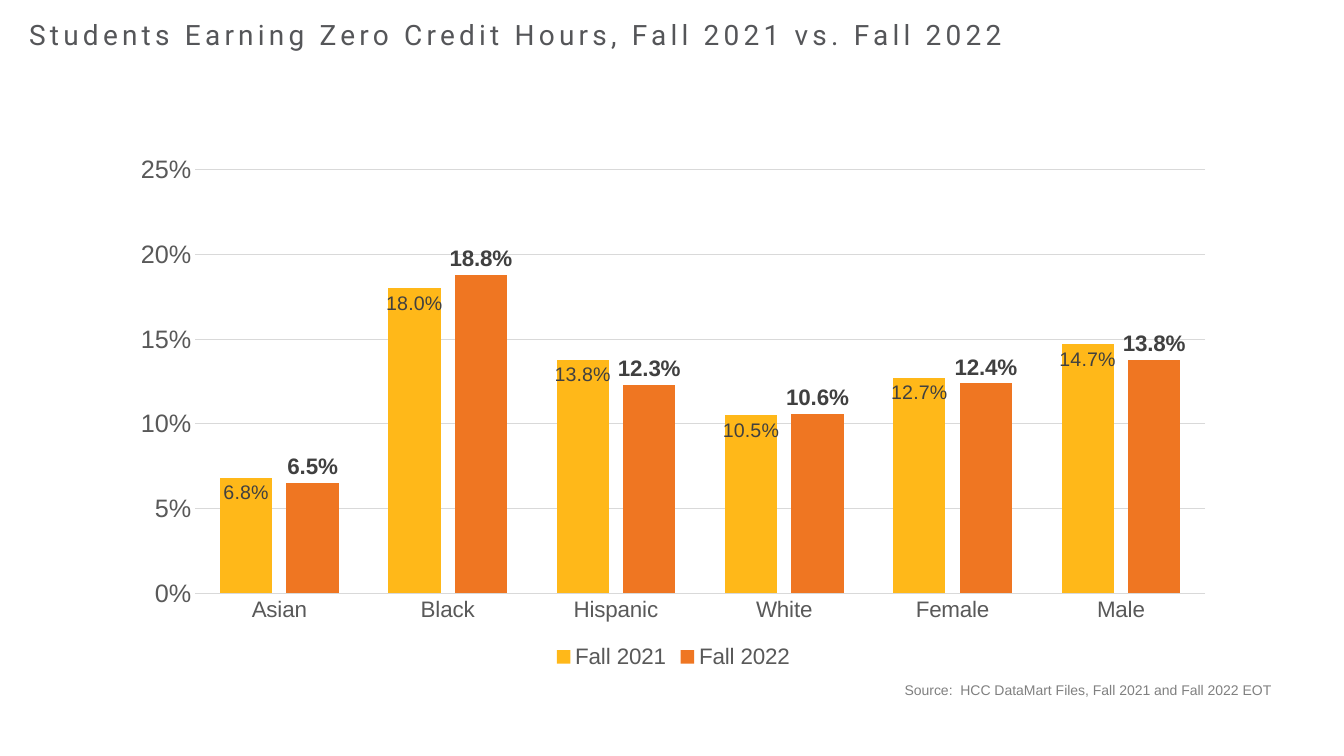
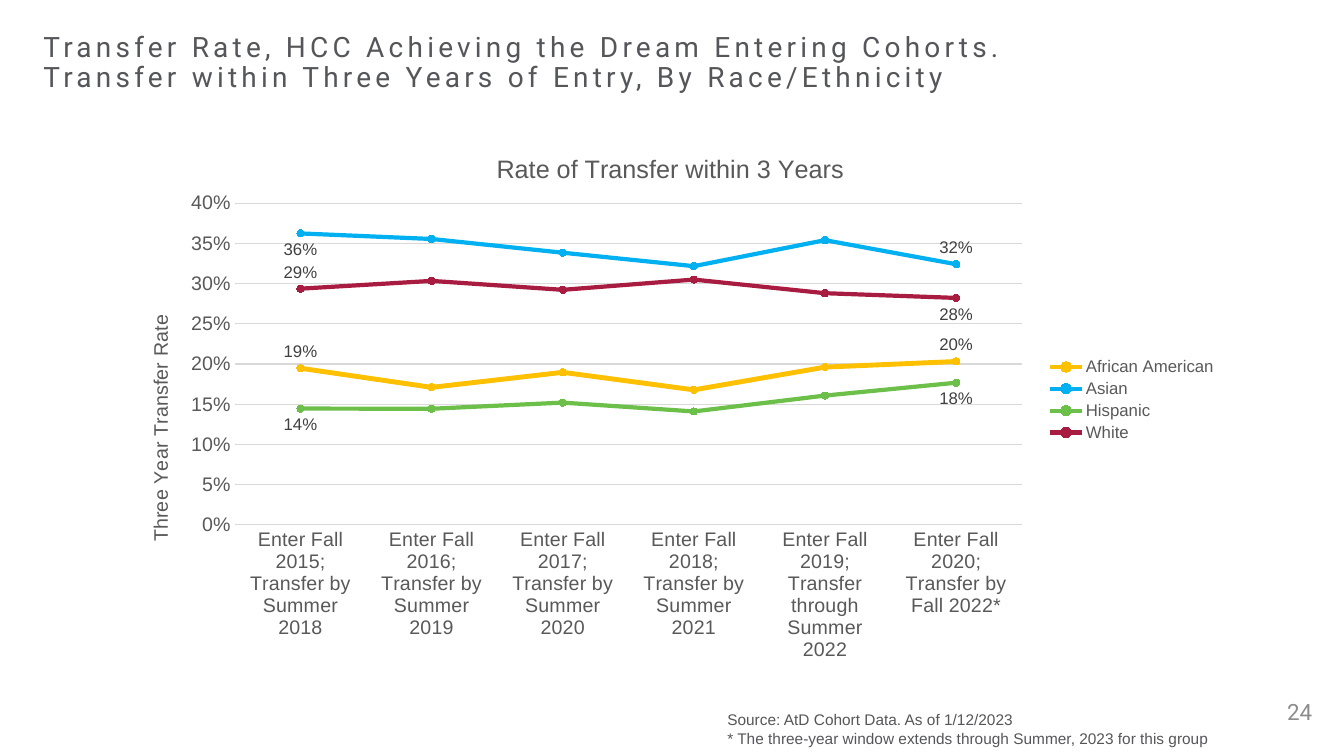
import pptx
import pptx.chart.data
import pptx.dml.color
import pptx.enum.chart
import pptx.enum.text
import pptx.oxml
import pptx.oxml.ns
import pptx.util

Cm, Pt = pptx.util.Cm, pptx.util.Pt
RGB = pptx.dml.color.RGBColor
CT = pptx.enum.chart.XL_CHART_TYPE
LABEL = pptx.enum.chart.XL_LABEL_POSITION
LEGEND = pptx.enum.chart.XL_LEGEND_POSITION
ALIGN = pptx.enum.text.PP_ALIGN
ANCHOR = pptx.enum.text.MSO_ANCHOR
FIT = pptx.enum.text.MSO_AUTO_SIZE
qn = pptx.oxml.ns.qn

HEAD_FONT, BODY_FONT = "Roboto", "Arial"
SLATE = RGB(0x55, 0x56, 0x59)
AXIS_GREY = RGB(0x59, 0x59, 0x59)
LABEL_GREY = RGB(0x40, 0x40, 0x40)
SOURCE_GREY = RGB(0x80, 0x80, 0x80)
NUMBER_GREY = RGB(0x8C, 0x8C, 0x8C)
GRID_GREY = RGB(0xD9, 0xD9, 0xD9)
AMBER = RGB(0xFF, 0xB8, 0x19)
ORANGE = RGB(0xEF, 0x76, 0x22)
GOLD = RGB(0xFF, 0xC0, 0x00)
BLUE = RGB(0x00, 0xB0, 0xF0)
DEEP_BLUE = RGB(0x00, 0x93, 0xC9)
GREEN = RGB(0x6C, 0xC0, 0x49)
CRIMSON = RGB(0xA9, 0x1C, 0x41)

# Boxes are left, top, width, height in centimetres
CHART_BOX = (3, 3.18, 27.94, 13.79)
TITLE_SIZE = (25.73, 0.97)


# ---- Text ----
def style_font(font, size, color, name=BODY_FONT, bold=False):
    font.size, font.name, font.bold = Pt(size), name, bold
    font.color.rgb = color


def write(tf, text, size, color, name=BODY_FONT, align=ALIGN.LEFT,
          anchor=ANCHOR.TOP, fit=FIT.NONE, leading=None, tracking=None):
    """Fill a text frame, one paragraph for each line of text."""
    tf.word_wrap, tf.auto_size, tf.vertical_anchor = True, fit, anchor
    for i, line in enumerate(text.split("\n")):
        p = tf.paragraphs[0] if i == 0 else tf.add_paragraph()
        p.alignment, p.line_spacing = align, leading
        r = p.add_run()
        r.text = line
        style_font(r.font, size, color, name)
        if tracking:
            r.font._element.set("spc", str(tracking * 100))


def add_text(slide, box, text, size, color, **fmt):
    sp = slide.shapes.add_textbox(*map(Cm, box))
    write(sp.text_frame, text, size, color, **fmt)


def add_titled_slide(prs, left, top, text):
    slide = prs.slides.add_slide(prs.slide_layouts[5])
    sp = slide.shapes.title
    sp.left, sp.top = Cm(left), Cm(top)
    sp.width, sp.height = map(Cm, TITLE_SIZE)
    write(sp.text_frame, text, 20, SLATE, name=HEAD_FONT,
          anchor=ANCHOR.MIDDLE, leading=0.9, tracking=3)
    return slide


# ---- Chart parts ----
def place_part(parent, index, box, chart_box, inner=False):
    """Place a chart part; box is in centimetres from the chart's corner."""
    for old in parent.findall(qn("c:layout")):
        parent.remove(old)
    layout = parent.makeelement(qn("c:layout"), {})
    parent.insert(index, layout)
    manual = pptx.oxml.ns.qn("c:manualLayout")
    manual = layout.makeelement(manual, {})
    layout.append(manual)
    values = [("layoutTarget", "inner")] if inner else []
    values += [("xMode", "edge"), ("yMode", "edge")]
    spans = chart_box[2:] * 2
    values += [(k, str(v / span)) for k, v, span in zip("xywh", box, spans)]
    for tag, value in values:
        manual.append(manual.makeelement(qn("c:" + tag), {"val": value}))


def write_chart_title(title, text, size, box, chart_box):
    tf = title.text_frame
    tf.text = text
    style_font(tf.paragraphs[0].runs[0].font, size, AXIS_GREY)
    place_part(title._element, 1, box, chart_box)


def add_base_chart(slide, box, kind, cats, series, number_format, plot_box,
                   cat_size, val_size, legend, legend_size):
    data = pptx.chart.data.CategoryChartData(number_format=number_format)
    data.categories = cats
    for name, values in series:
        data.add_series(name, values)
    chart = slide.shapes.add_chart(kind, *map(Cm, box), data).chart
    chart.has_title = False
    chart.font.name, chart.font.size = BODY_FONT, Pt(10)

    # Axes and grid
    cat, val = chart.category_axis, chart.value_axis
    for axis, size in ((cat, cat_size), (val, val_size)):
        axis.major_tick_mark = pptx.enum.chart.XL_TICK_MARK.NONE
        axis.minor_tick_mark = pptx.enum.chart.XL_TICK_MARK.NONE
        style_font(axis.tick_labels.font, size, AXIS_GREY)
    val.has_major_gridlines = True
    for line in (cat.format.line, val.major_gridlines.format.line):
        line.color.rgb, line.width = GRID_GREY, Pt(0.75)
    val.format.line.fill.background()
    val.minimum_scale, val.major_unit = 0, 0.05
    val.tick_labels.number_format = "0%"
    val.tick_labels.number_format_is_linked = False

    # Legend and plot area
    chart.has_legend = True
    chart.legend.position = legend
    chart.legend.include_in_layout = False
    style_font(chart.legend.font, legend_size, AXIS_GREY)
    chart.plots[0].vary_by_categories = False
    place_part(chart._chartSpace.chart.plotArea, 0, plot_box, box, inner=True)
    return chart


# ---- Charts ----
def add_zero_credit_chart(slide, box):
    cats = ["Asian", "Black", "Hispanic", "White", "Female", "Male"]
    series = [("Fall 2021", (0.068, 0.18, 0.138, 0.105, 0.127, 0.147)),
              ("Fall 2022", (0.065, 0.188, 0.123, 0.106, 0.124, 0.138))]
    formats = [(AMBER, LABEL.INSIDE_END, 14, False),
               (ORANGE, LABEL.OUTSIDE_END, 16, True)]
    chart = add_base_chart(slide, box, CT.COLUMN_CLUSTERED, cats, series,
                           "0.0%", (1.92, 0.25, 25.45, 11.52),
                           16, 18, LEGEND.BOTTOM, 16)
    chart.value_axis.maximum_scale = 0.27
    plot = chart.plots[0]
    plot.gap_width, plot.overlap = 95, -27
    for ser, (color, position, size, bold) in zip(plot.series, formats):
        ser.invert_if_negative = False
        ser.format.fill.solid()
        ser.format.fill.fore_color.rgb = color
        labels = ser.data_labels
        labels.show_value, labels.position = True, position
        labels.number_format = "0.0%"
        labels.number_format_is_linked = False
        style_font(labels.font, size, LABEL_GREY, bold=bold)


def add_transfer_chart(slide, box):
    ends = ["by Summer 2018", "by Summer 2019", "by Summer 2020",
            "by Summer 2021", "through Summer 2022", "by Fall 2022*"]
    cats = [f"Enter Fall {year}; Transfer {end}"
            for year, end in enumerate(ends, 2015)]
    series = [
        ("African American", (0.1947, 0.1709, 0.1896, 0.1678, 0.1961, 0.2031)),
        ("Asian", (0.3623, 0.3554, 0.3383, 0.3216, 0.3539, 0.324)),
        ("Hispanic", (0.1445, 0.1443, 0.1519, 0.1409, 0.1607, 0.1767)),
        ("White", (0.2936, 0.3033, 0.2922, 0.3049, 0.288, 0.2821))]
    # Line colour, marker colour, width, first and last label position
    formats = [(GOLD, GOLD, 3.5, LABEL.ABOVE, LABEL.ABOVE),
               (BLUE, DEEP_BLUE, 3, LABEL.BELOW, LABEL.ABOVE),
               (GREEN, GREEN, 3, LABEL.BELOW, LABEL.BELOW),
               (CRIMSON, CRIMSON, 3, LABEL.ABOVE, LABEL.BELOW)]
    chart = add_base_chart(slide, box, CT.LINE_MARKERS, cats, series, "0%",
                           (2.92, 1.94, 19.83, 8.11),
                           14, 14, LEGEND.RIGHT, 12)
    chart.value_axis.maximum_scale = 0.4
    write_chart_title(chart.chart_title, "Rate of Transfer within 3 Years",
                      18, (9.4, 0.55), box)
    write_chart_title(chart.value_axis.axis_title, "Three Year Transfer Rate",
                      14, (0.63, 4.66), box)

    for ser, (color, dot, width, first, last) in zip(chart.plots[0].series,
                                                     formats):
        ser.smooth = False
        ser.format.line.color.rgb, ser.format.line.width = color, Pt(width)
        marker = ser.marker
        marker.style = pptx.enum.chart.XL_MARKER_STYLE.CIRCLE
        marker.size = 5
        marker.format.fill.solid()
        marker.format.fill.fore_color.rgb = dot
        marker.format.line.color.rgb = color
        ser.data_labels.show_value = False
        for i, position in ((0, first), (len(cats) - 1, last)):
            label = ser.points[i].data_label
            style_font(label.font, 12, LABEL_GREY)
            label.position = position


# ---- Slides ----
def build_zero_credit_slide(prs):
    slide = add_titled_slide(
        prs, 0.48, 0.43,
        "Students Earning Zero Credit Hours, Fall 2021 vs. Fall 2022")
    add_zero_credit_chart(slide, CHART_BOX)
    add_text(slide, (21.79, 17.04, 11.25, 0.69),
             "Source:  HCC DataMart Files, Fall 2021 and Fall 2022 EOT",
             10, SOURCE_GREY, align=ALIGN.CENTER, fit=FIT.SHAPE_TO_FIT_TEXT)


def build_transfer_slide(prs):
    slide = add_titled_slide(
        prs, 0.84, 1.12,
        "Transfer Rate, HCC Achieving the Dream Entering Cohorts. "
        "Transfer within Three Years of Entry, By Race/Ethnicity")
    add_transfer_chart(slide, CHART_BOX)
    add_text(slide, (18.08, 17.78, 14.45, 1.19),
             "Source: AtD Cohort Data. As of 1/12/2023\n"
             "* The three-year window extends through Summer, 2023 "
             "for this group", 11, SLATE, fit=FIT.SHAPE_TO_FIT_TEXT)
    add_text(slide, (31.75, 17.25, 1.57, 1.14), "24", 16, NUMBER_GREY,
             name=HEAD_FONT, align=ALIGN.RIGHT, anchor=ANCHOR.BOTTOM)


def main():
    prs = pptx.Presentation()
    prs.slide_width, prs.slide_height = Cm(33.87), Cm(19.05)
    build_zero_credit_slide(prs)
    build_transfer_slide(prs)
    prs.save("out.pptx")


if __name__ == "__main__":
    main()
